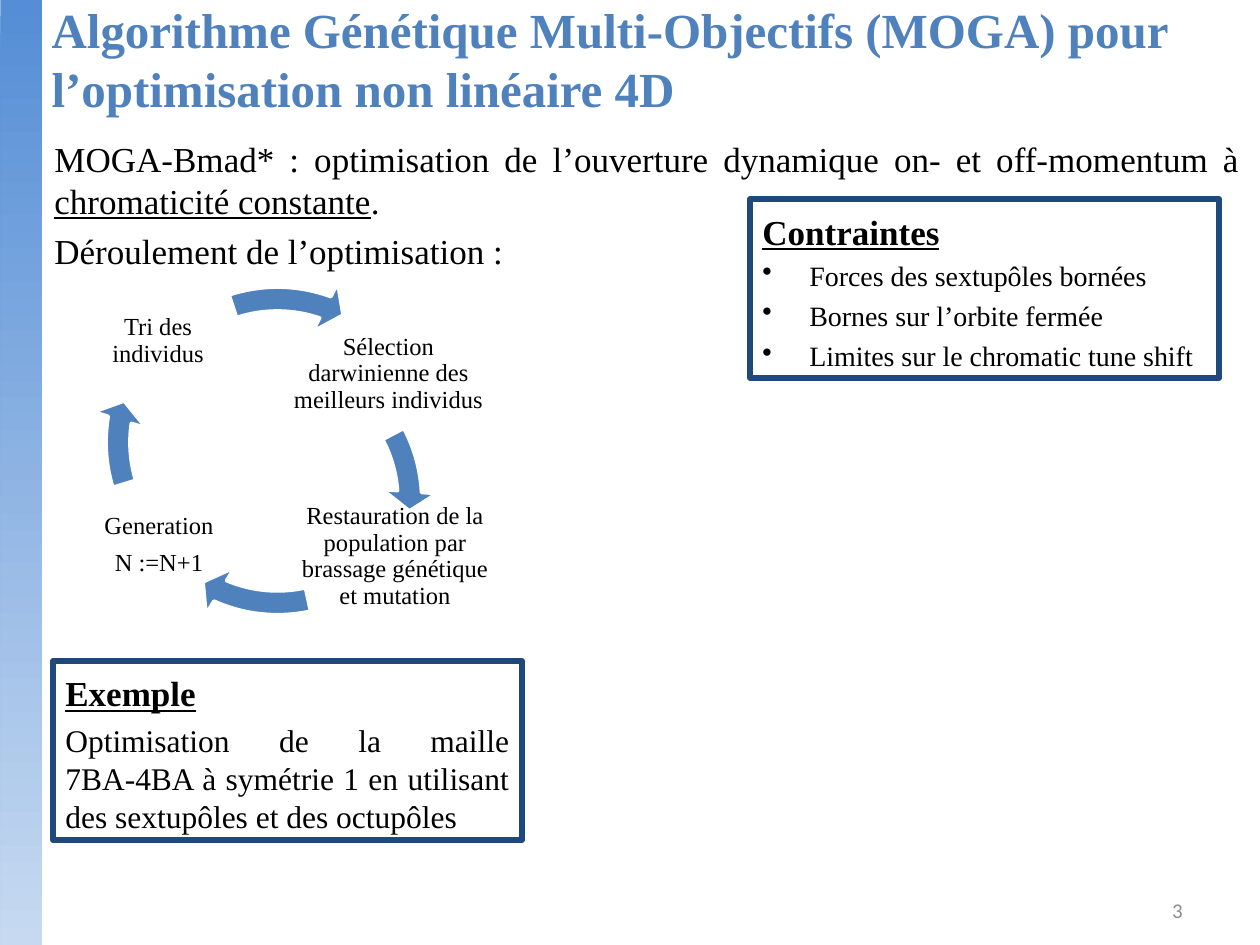
import pptx
import pptx.util
import pptx.dml.color
import pptx.enum.shapes
import pptx.enum.text
import pptx.oxml.ns
import lxml.etree

SCALE = 914400 / 126
FONT = "Times New Roman"
BLUE = pptx.dml.color.RGBColor(0x4F, 0x81, 0xBD)
NAVY = pptx.dml.color.RGBColor(0x1F, 0x49, 0x7D)
BAR_TOP = pptx.dml.color.RGBColor(0x55, 0x8E, 0xD5)
BAR_BOTTOM = pptx.dml.color.RGBColor(0xC6, 0xD9, 0xF1)
GREY = pptx.dml.color.RGBColor(0x8C, 0x8C, 0x8C)
BLACK = pptx.dml.color.RGBColor(0, 0, 0)
WHITE = pptx.dml.color.RGBColor(255, 255, 255)
SHAPE = pptx.enum.shapes.MSO_SHAPE
ALIGN = pptx.enum.text.PP_ALIGN
ANCHOR = pptx.enum.text.MSO_ANCHOR

STEPS = [
    ((281, 314, 215, 120), ["Sélection darwinienne des meilleurs individus"]),
    ((291, 512, 208, 89), ["Restauration de la population par brassage génétique et mutation"]),
    ((86, 485, 146, 120), ["Generation", "N :=N+1"]),
    ((98, 281, 120, 120), ["Tri des individus"]),
]
ARROWS = [
    (98, 331, 213.86, 199.28),
    (108, 291, 68.21, 46.57),
    (91, 273, 113.48, 97.86),
    (108, 272, 173.79, 151.06),
]
ARROW_SIZE = 339


def px(length):
    return pptx.util.Emu(round(length * SCALE))


def place(left, top, width, height):
    return px(left), px(top), px(width), px(height)


def style(font, size, color=BLACK, name=FONT, bold=False, underline=False):
    font.name = name
    font.size = pptx.util.Pt(size)
    font.color.rgb = color
    font.bold = bold
    font.underline = underline


def add_bullet(para):
    properties = para._p.get_or_add_pPr()
    properties.set("marL", str(px(47)))
    properties.set("indent", str(px(-47)))
    bullet = lxml.etree.SubElement(properties, pptx.oxml.ns.qn("a:buChar"))
    bullet.set("char", "•")


def write_justified(frame, entries):
    frame.word_wrap = True
    frame.vertical_anchor = ANCHOR.TOP
    frame.margin_top = px(11)
    frame.text = "\n".join(text for text, size, bulleted in entries)
    for index, (para, entry) in enumerate(zip(frame.paragraphs, entries)):
        text, size, bulleted = entry
        para.alignment = ALIGN.JUSTIFY
        if index:
            para.space_before = pptx.util.Pt(round(size * 0.23, 1))
        if bulleted:
            add_bullet(para)
        for span in para.runs:
            style(span.font, size)


def add_side_bar(page):
    bar = page.shapes.add_shape(SHAPE.RECTANGLE, *place(-451, 451, 945, 42))
    bar.rotation = 270
    bar.shadow.inherit = False
    bar.line.fill.background()
    bar.fill.gradient()
    bar.fill.gradient_angle = 180
    for stop, color in zip(bar.fill.gradient_stops, (BAR_TOP, BAR_BOTTOM)):
        stop.color.rgb = color


def set_title(page, text):
    title = page.shapes.title
    title.left, title.top, title.width, title.height = place(39, 0, 1221, 116)
    frame = title.text_frame
    frame.text = text
    frame.word_wrap = True
    frame.auto_size = pptx.enum.text.MSO_AUTO_SIZE.NONE
    frame.vertical_anchor = ANCHOR.MIDDLE
    para = frame.paragraphs[0]
    para.alignment = ALIGN.LEFT
    style(para.runs[0].font, 28, BLUE, bold=True)


def add_introduction(page):
    box = page.shapes.add_textbox(*place(42, 126, 1210, 273))
    write_justified(box.text_frame, [
        ("MOGA-Bmad* : optimisation de l’ouverture dynamique on- et off-momentum à ", 20, False),
        ("Déroulement de l’optimisation :", 20, False),
    ])
    para = box.text_frame.paragraphs[0]
    for text, underline in (("chromaticité constante", True), (".", False)):
        span = para.add_run()
        span.text = text
        style(span.font, 20, underline=underline)


def add_step(group, bounds, lines):
    box = group.shapes.add_textbox(*place(*bounds))
    frame = box.text_frame
    frame.text = "\n".join(lines)
    frame.word_wrap = True
    frame.vertical_anchor = ANCHOR.MIDDLE
    frame.margin_left = frame.margin_right = px(2)
    frame.margin_top = frame.margin_bottom = px(2)
    for para in frame.paragraphs:
        para.alignment = ALIGN.CENTER
        para.line_spacing = 0.9
        para.space_after = pptx.util.Pt(5.6)
        style(para.runs[0].font, 14)


def add_arrow(group, left, top, end_angle, start_angle):
    arrow = group.shapes.add_shape(
        SHAPE.CIRCULAR_ARROW, *place(left, top, ARROW_SIZE, ARROW_SIZE))
    for index, value in enumerate((0.07, 4.66, end_angle, start_angle, 0.08)):
        arrow.adjustments[index] = value
    arrow.shadow.inherit = False
    arrow.fill.solid()
    arrow.fill.fore_color.rgb = BLUE
    arrow.line.color.rgb = WHITE
    arrow.line.width = pptx.util.Pt(2)


def add_cycle(page):
    group = page.shapes.add_group_shape()
    for (bounds, lines), arrow in zip(STEPS, ARROWS):
        add_step(group, bounds, lines)
        add_arrow(group, *arrow)


def add_panel(page, left, top, heading, entries):
    panel = page.shapes.add_shape(SHAPE.RECTANGLE, *place(left, top, 469, 179))
    panel.shadow.inherit = False
    panel.fill.background()
    panel.line.color.rgb = NAVY
    panel.line.width = pptx.util.Pt(3.25)
    write_justified(panel.text_frame, [(heading, 20, False)] + entries)
    font = panel.text_frame.paragraphs[0].runs[0].font
    font.bold = True
    font.underline = True


def add_page_number(page, text):
    box = page.shapes.add_textbox(*place(1104, 885, 147, 50))
    box.text_frame.text = text
    box.text_frame.word_wrap = True
    box.text_frame.vertical_anchor = ANCHOR.MIDDLE
    para = box.text_frame.paragraphs[0]
    para.alignment = ALIGN.CENTER
    style(para.runs[0].font, 12, GREY, "Calibri")


def main():
    deck = pptx.Presentation()
    deck.slide_width, deck.slide_height = px(1260), px(945)
    page = deck.slides.add_slide(deck.slide_layouts[5])
    add_side_bar(page)
    set_title(page, "Algorithme Génétique Multi-Objectifs (MOGA) pour l’optimisation non linéaire 4D")
    add_introduction(page)
    add_page_number(page, "3")
    add_cycle(page)
    add_panel(page, 750, 199, "Contraintes", [
        ("Forces des sextupôles bornées", 16, True),
        ("Bornes sur l’orbite fermée", 16, True),
        ("Limites sur le chromatic tune shift", 16, True),
    ])
    add_panel(page, 53, 661, "Exemple", [
        ("Optimisation de la maille 7BA-4BA à symétrie 1 en utilisant "
         "des sextupôles et des octupôles", 18, False),
    ])
    deck.save("out.pptx")


if __name__ == "__main__":
    main()
